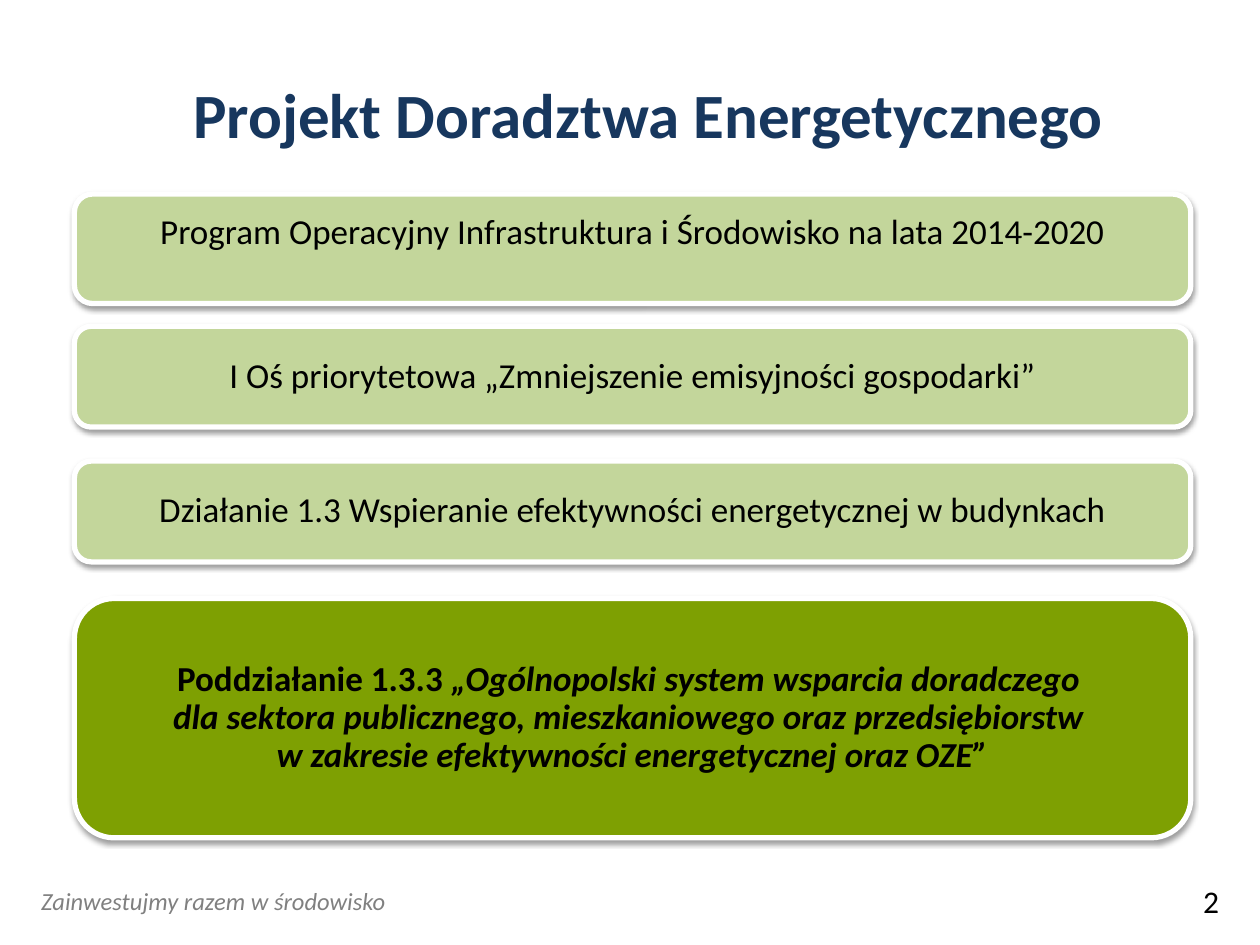
"""Build the slide on the energy advisory project and its programme hierarchy."""
from dataclasses import dataclass

import pptx
import pptx.dml.color
import pptx.enum.shapes
import pptx.enum.text
import pptx.oxml
import pptx.oxml.ns
import pptx.util
from pptx.util import Pt


@dataclass(frozen=True)
class Theme:
    font: str = "Calibri"
    title: str = "17375E"
    text: str = "000000"
    muted: str = "808080"
    light: str = "C3D69B"
    strong: str = "7EA002"
    border: str = "FFFFFF"
    title_size: int = 36
    body_size: int = 20
    number_size: int = 18
    footer_size: int = 14


THEME = Theme()
ALIGN = pptx.enum.text.PP_ALIGN
MIDDLE = pptx.enum.text.MSO_ANCHOR.MIDDLE

TITLE = "Projekt Doradztwa Energetycznego"
FOOTER = "Zainwestujmy razem w środowisko"
NUMBER = "2"

# top, height, fill, extra bottom inset, runs of (text, bold, italic)
LEVELS = [
    (110.9, 62.6, THEME.light, 18, [
        ("Program Operacyjny Infrastruktura i Środowisko na lata 2014-2020", False, False)]),
    (186.5, 57.6, THEME.light, 0, [
        ("I Oś priorytetowa „Zmniejszenie emisyjności gospodarki”", False, False)]),
    (263.5, 57.6, THEME.light, 0, [
        ("Działanie 1.3 Wspieranie efektywności energetycznej w budynkach", False, False)]),
    (342, 136.8, THEME.strong, 0, [
        ("Poddziałanie 1.3.3 ", True, False),
        ("„Ogólnopolski system wsparcia doradczego \n"
         "dla sektora publicznego, mieszkaniowego oraz przedsiębiorstw \n"
         "w zakresie efektywności energetycznej oraz OZE”", True, True)]),
]
LEVEL_LEFT, LEVEL_WIDTH = 42.5, 638
SIDE_INSET, EDGE_INSET = 28, 3

SHADOW = (
    f'<a:effectLst {pptx.oxml.ns.nsdecls("a")}>'
    '<a:outerShdw blurRad="39400" dist="20300" dir="5400000" rotWithShape="0">'
    '<a:srgbClr val="000000"><a:alpha val="38000"/></a:srgbClr>'
    '</a:outerShdw></a:effectLst>'
)


def rgb(value):
    return pptx.dml.color.RGBColor.from_string(value)


def style(r, size, color, bold=False, italic=False):
    r.font.name, r.font.size = THEME.font, Pt(size)
    r.font.bold, r.font.italic = bold, italic
    r.font.color.rgb = rgb(color)


def add_label(s, box, text, size, color, align=ALIGN.LEFT, bold=False, italic=False):
    tf = s.shapes.add_textbox(*map(Pt, box)).text_frame
    tf.word_wrap = True
    tf.text = text
    p = tf.paragraphs[0]
    p.alignment = align
    style(p.runs[0], size, color, bold, italic)
    return tf


def add_level(s, top, height, fill, lift, runs):
    sp = s.shapes.add_shape(
        pptx.enum.shapes.MSO_SHAPE.ROUNDED_RECTANGLE,
        Pt(LEVEL_LEFT), Pt(top), Pt(LEVEL_WIDTH), Pt(height))
    sp.fill.solid()
    sp.fill.fore_color.rgb = rgb(fill)
    sp.line.color.rgb = rgb(THEME.border)
    sp.line.width = Pt(3)
    sp.shadow.inherit = False
    effects = sp.element.spPr.find(pptx.oxml.ns.qn("a:effectLst"))
    sp.element.spPr.replace(effects, pptx.oxml.parse_xml(SHADOW))

    tf = sp.text_frame
    tf.word_wrap, tf.vertical_anchor = True, MIDDLE
    tf.margin_left = tf.margin_right = Pt(SIDE_INSET)
    tf.margin_top, tf.margin_bottom = Pt(EDGE_INSET), Pt(EDGE_INSET + lift)
    p = tf.paragraphs[0]
    p.alignment, p.line_spacing = ALIGN.CENTER, 0.9
    for text, bold, italic in runs:
        for i, line in enumerate(text.split("\n")):
            if i:
                p.add_line_break()
            r = p.add_run()
            r.text = line
            style(r, THEME.body_size, THEME.text, bold, italic)


def main():
    prs = pptx.Presentation()
    prs.slide_width, prs.slide_height = Pt(720), Pt(540)
    s = prs.slides.add_slide(prs.slide_layouts[6])
    title = add_label(s, (70.5, 20, 600, 90), TITLE, THEME.title_size, THEME.title,
                      ALIGN.CENTER, bold=True)
    title.vertical_anchor = MIDDLE
    for level in LEVELS:
        add_level(s, *level)
    add_label(s, (16.5, 502.5, 304, 24.5), FOOTER, THEME.footer_size, THEME.muted, italic=True)
    add_label(s, (680.4, 500.4, 39.6, 29), NUMBER, THEME.number_size, THEME.text)
    prs.save("out.pptx")


if __name__ == "__main__":
    main()
